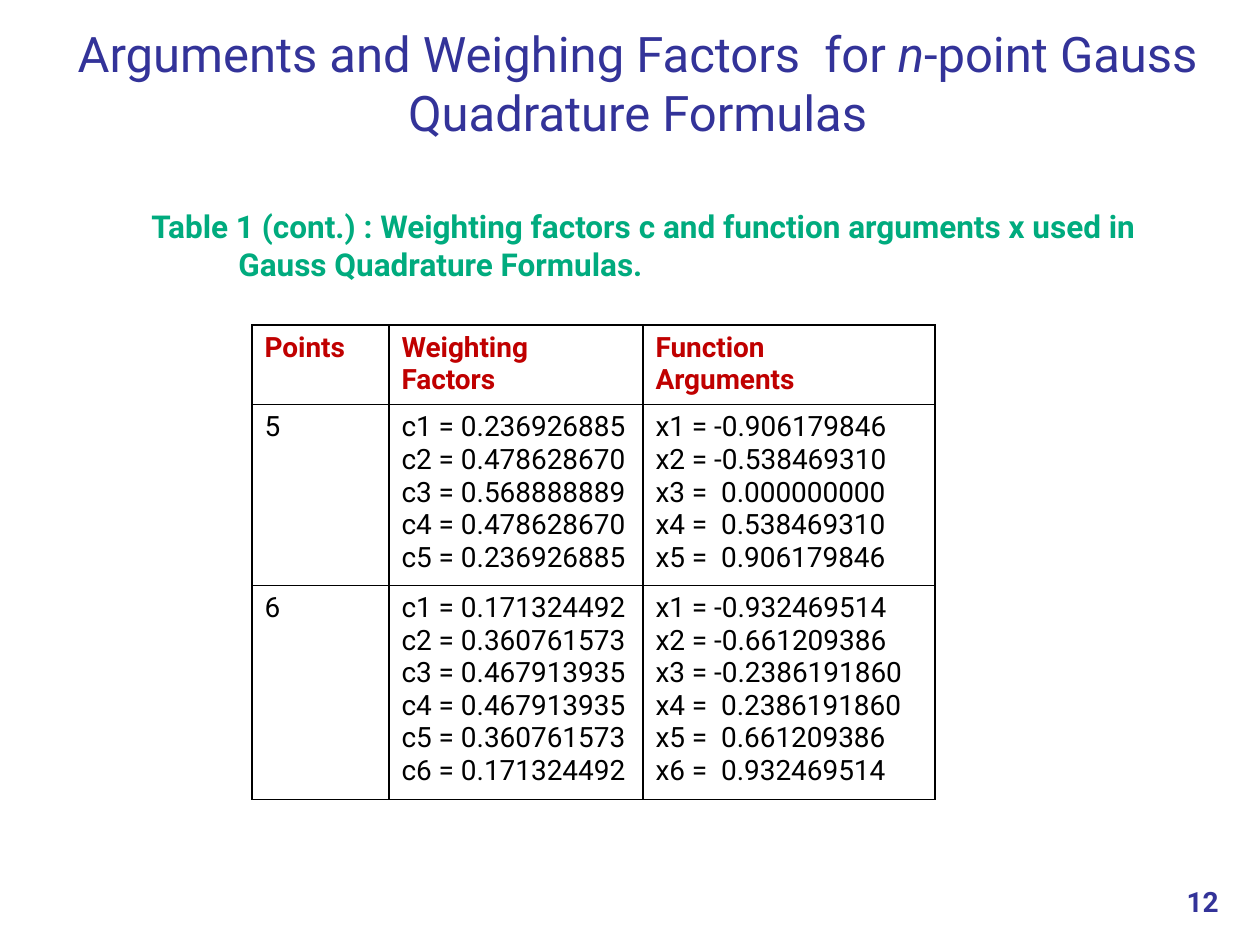
from lxml.etree import SubElement
from pptx import Presentation
from pptx.dml.color import RGBColor
from pptx.enum.text import MSO_ANCHOR, PP_ALIGN
from pptx.oxml.ns import qn
from pptx.util import Emu, Pt

NAVY = RGBColor(0x33, 0x33, 0x99)
GREEN = RGBColor(0x00, 0xAB, 0x7E)
RED = RGBColor(0xC0, 0x00, 0x00)
BLACK = RGBColor(0x00, 0x00, 0x00)
FONT = "Roboto"
SCALE = 914400 / 126

TITLE_RUNS = [
    ("Arguments and Weighing Factors  for ", False),
    ("n", True),
    ("-point Gauss Quadrature Formulas", False),
]
CAPTION = "Table 1 (cont.) : Weighting factors c and function arguments x used in Gauss Quadrature Formulas."
PAGE_NUMBER = "12"
HEADINGS = [["Points"], ["Weighting", "Factors"], ["Function", "Arguments"]]
FORMULAS = {
    "5": (
        ["0.236926885", "0.478628670", "0.568888889", "0.478628670", "0.236926885"],
        ["-0.906179846", "-0.538469310", " 0.000000000", " 0.538469310", " 0.906179846"],
    ),
    "6": (
        ["0.171324492", "0.360761573", "0.467913935", "0.467913935", "0.360761573", "0.171324492"],
        ["-0.932469514", "-0.661209386", "-0.2386191860", " 0.2386191860", " 0.661209386", " 0.932469514"],
    ),
}
TABLE_LEFT, TABLE_TOP = 252, 325
COLUMN_WIDTHS = [137, 254, 292]
ROW_HEIGHTS = [78, 175, 208]


def px(length):
    """Turn px into EMU."""
    return Emu(round(length * SCALE))


def add_run(paragraph, text, size, color, bold=False, italic=False):
    """Add one styled run to a paragraph."""
    run = paragraph.add_run()
    run.text = text
    run.font.name = FONT
    run.font.size = Pt(size)
    run.font.color.rgb = color
    run.font.bold = bold
    run.font.italic = italic


def add_text_box(slide, left, top, width, height, anchor, alignment):
    """Add a wrapping text box and return its first paragraph."""
    box = slide.shapes.add_textbox(px(left), px(top), px(width), px(height))
    box.text_frame.word_wrap = True
    box.text_frame.vertical_anchor = anchor
    paragraph = box.text_frame.paragraphs[0]
    paragraph.alignment = alignment
    return paragraph


def set_borders(cell, widths):
    """Draw the left, right, top and bottom borders of a cell."""
    properties = cell._tc.get_or_add_tcPr()
    for index, (side, width) in enumerate(zip("LRTB", widths)):
        line = SubElement(properties, qn(f"a:ln{side}"), w=str(Pt(width)))
        properties.insert(index, line)
        fill = SubElement(line, qn("a:solidFill"))
        SubElement(fill, qn("a:srgbClr"), val=str(BLACK))


def numbered(letter, values):
    """Label values as letter1, letter2 and so on."""
    return [f"{letter}{index} = {value}" for index, value in enumerate(values, 1)]


def add_formula_table(slide):
    """Add the table of weighting factors and arguments."""
    rows = [HEADINGS]
    for points, (factors, arguments) in FORMULAS.items():
        rows.append([[points], numbered("c", factors), numbered("x", arguments)])
    table = slide.shapes.add_table(
        len(rows), len(HEADINGS), px(TABLE_LEFT), px(TABLE_TOP),
        px(sum(COLUMN_WIDTHS)), px(sum(ROW_HEIGHTS)),
    ).table
    table.first_row = False
    table.horz_banding = False
    for column, width in zip(table.columns, COLUMN_WIDTHS):
        column.width = px(width)
    for row_index, row in enumerate(rows):
        table.rows[row_index].height = px(ROW_HEIGHTS[row_index])
        heading = row_index == 0
        top = 1 if heading else 0.75
        bottom = 1 if row_index == len(rows) - 1 else 0.75
        for column_index, lines in enumerate(row):
            cell = table.cell(row_index, column_index)
            cell.fill.background()
            set_borders(cell, (1, 1, top, bottom))
            frame = cell.text_frame
            for line_index, line in enumerate(lines):
                paragraph = frame.add_paragraph() if line_index else frame.paragraphs[0]
                add_run(paragraph, line, 16, RED if heading else BLACK, bold=heading)


def main():
    """Build and save the slide."""
    presentation = Presentation()
    presentation.slide_width = px(1260)
    presentation.slide_height = px(945)
    slide = presentation.slides.add_slide(presentation.slide_layouts[6])

    title = add_text_box(slide, 42, 42, 1191, 105, MSO_ANCHOR.BOTTOM, PP_ALIGN.CENTER)
    for text, italic in TITLE_RUNS:
        add_run(title, text, 28, NAVY, italic=italic)

    number = add_text_box(slide, 1084, 861, 147, 63, MSO_ANCHOR.BOTTOM, PP_ALIGN.RIGHT)
    add_run(number, PAGE_NUMBER, 16, NAVY, bold=True)

    add_formula_table(slide)

    caption = add_text_box(slide, 139, 201, 1018, 89, MSO_ANCHOR.TOP, PP_ALIGN.LEFT)
    properties = caption._p.get_or_add_pPr()
    properties.set("marL", str(px(87)))
    properties.set("indent", str(-px(87)))
    add_run(caption, CAPTION, 18, GREEN, bold=True)

    presentation.save("out.pptx")


if __name__ == "__main__":
    main()
